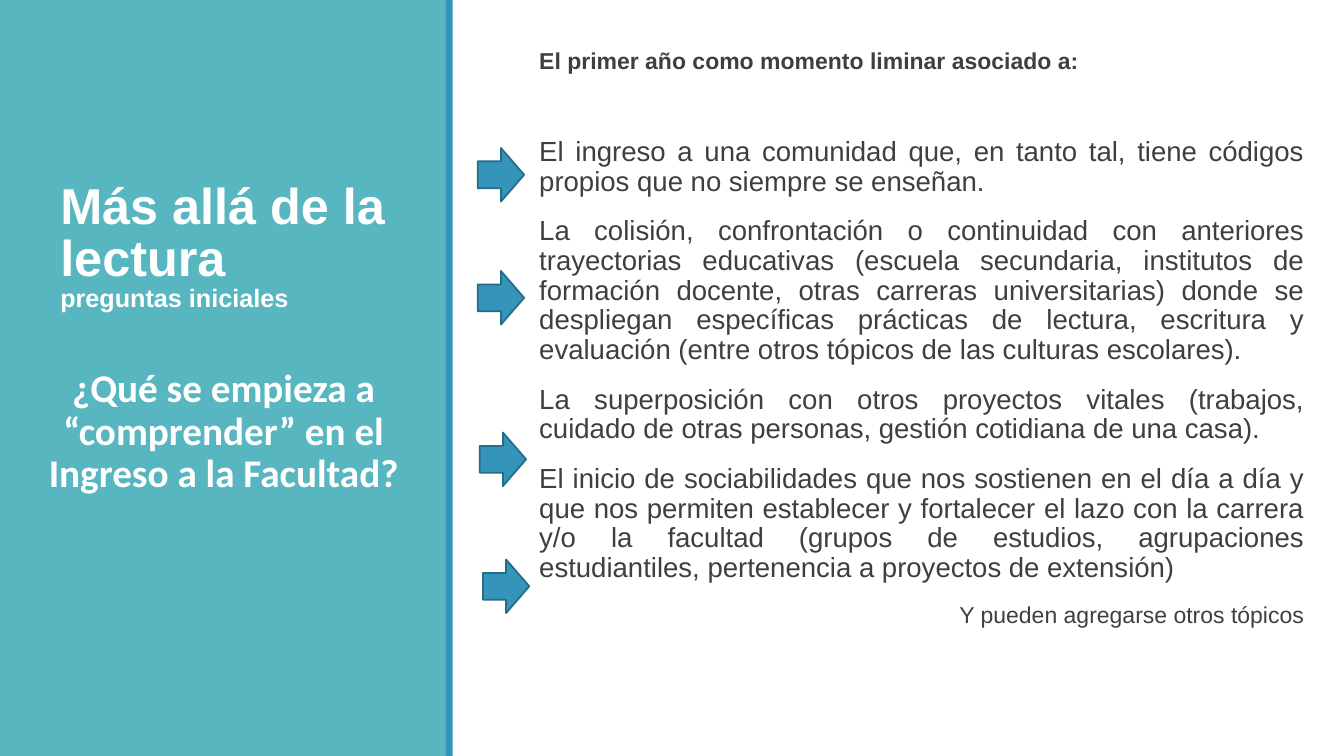
from pptx import Presentation
from pptx.dml.color import RGBColor
from pptx.enum.shapes import MSO_SHAPE
from pptx.enum.text import MSO_ANCHOR, PP_ALIGN
from pptx.util import Cm, Pt

TEAL = RGBColor(0x58, 0xB6, 0xC0)
BLUE = RGBColor(0x34, 0x94, 0xBA)
DARK_BLUE = RGBColor(0x25, 0x6C, 0x87)
WHITE = RGBColor(0xFF, 0xFF, 0xFF)
GREY = RGBColor(0x3F, 0x3F, 0x3F)

HEADING = "El primer año como momento liminar asociado a:"
TOPICS = [
    "El ingreso a una comunidad que, en tanto tal, tiene códigos propios que no "
    "siempre se enseñan.",
    "La colisión, confrontación o continuidad con anteriores trayectorias educativas "
    "(escuela secundaria, institutos de formación docente, otras carreras "
    "universitarias) donde se despliegan específicas prácticas de lectura, escritura "
    "y evaluación (entre otros tópicos de las culturas escolares).",
    "La superposición con otros proyectos vitales (trabajos, cuidado de otras "
    "personas, gestión cotidiana de una casa).",
    "El inicio de sociabilidades que nos sostienen en el día a día y que nos permiten "
    "establecer y fortalecer el lazo con la carrera y/o la facultad (grupos de "
    "estudios, agrupaciones estudiantiles, pertenencia a proyectos de extensión)",
]
CLOSING = "Y pueden agregarse otros tópicos"
ARROW_CORNERS = [(12.04, 3.73), (12.04, 6.83), (12.09, 10.9), (12.17, 14.1)]


def set_all(target, values):
    for name, value in values.items():
        setattr(target, name, value)


def add_block(page, kind, left, top, width, height, fill, line=None):
    block = page.shapes.add_shape(kind, Cm(left), Cm(top), Cm(width), Cm(height))
    block.shadow.inherit = False
    block.fill.solid()
    block.fill.fore_color.rgb = fill
    if line is None:
        block.line.fill.background()
    else:
        block.line.color.rgb = line
        block.line.width = Pt(1.25)


def add_box(page, left, top, width, height, side=0.25, anchor=MSO_ANCHOR.TOP):
    box = page.shapes.add_textbox(Cm(left), Cm(top), Cm(width), Cm(height))
    set_all(box.text_frame, {
        "word_wrap": True, "vertical_anchor": anchor,
        "margin_left": Cm(side), "margin_right": Cm(side),
        "margin_top": Cm(0.13), "margin_bottom": Cm(0.13),
    })
    return box.text_frame


def add_span(para, text, size, color, bold=False, font="Arial"):
    span = para.add_run()
    span.text = text
    set_all(span.font, {"name": font, "size": Pt(size), "bold": bold})
    span.font.color.rgb = color


def format_para(para, align, spacing=0.9, before=0):
    set_all(para, {"alignment": align, "line_spacing": spacing,
                   "space_before": Pt(before)})
    return para


def add_title(page):
    frame = add_box(page, 1.27, 1.65, 8.89, 6.35, anchor=MSO_ANCHOR.BOTTOM)
    para = format_para(frame.paragraphs[0], PP_ALIGN.LEFT, 0.85)
    add_span(para, "Más allá de la lectura", 36, WHITE, True)
    para.add_line_break()
    add_span(para, "preguntas iniciales", 18, WHITE, True)


def add_question(page):
    frame = add_box(page, 0.53, 9.17, 10.21, 8.33)
    para = format_para(frame.paragraphs[0], PP_ALIGN.CENTER)
    add_span(para, "¿Qué se empieza a “comprender” en el Ingreso a la Facultad?",
             28, WHITE, True, "Calibri")


def add_topics(page):
    frame = add_box(page, 13.59, 1.12, 19.28, 17.5, side=0)
    heading = format_para(frame.paragraphs[0], PP_ALIGN.JUSTIFY)
    add_span(heading, HEADING, 16.4, GREY, True)
    for index, topic in enumerate(TOPICS):
        before = 14 if index else 45
        para = format_para(frame.add_paragraph(), PP_ALIGN.JUSTIFY, before=before)
        add_span(para, topic, 19.7, GREY)
    closing = format_para(frame.add_paragraph(), PP_ALIGN.RIGHT, before=14)
    add_span(closing, CLOSING, 16.4, GREY)


def main():
    deck = Presentation()
    set_all(deck, {"slide_width": Cm(33.87), "slide_height": Cm(19.05)})
    page = deck.slides.add_slide(deck.slide_layouts[6])

    # Side panel and its edge
    add_block(page, MSO_SHAPE.RECTANGLE, 0, 0, 11.25, 19.05, TEAL)
    add_block(page, MSO_SHAPE.RECTANGLE, 11.23, 0, 0.18, 19.05, BLUE)

    # Texts
    add_title(page)
    add_topics(page)
    add_question(page)

    # Arrows pointing at the topics
    for left, top in ARROW_CORNERS:
        add_block(page, MSO_SHAPE.RIGHT_ARROW, left, top, 1.17, 1.35, BLUE, DARK_BLUE)

    deck.save("out.pptx")


if __name__ == "__main__":
    main()
